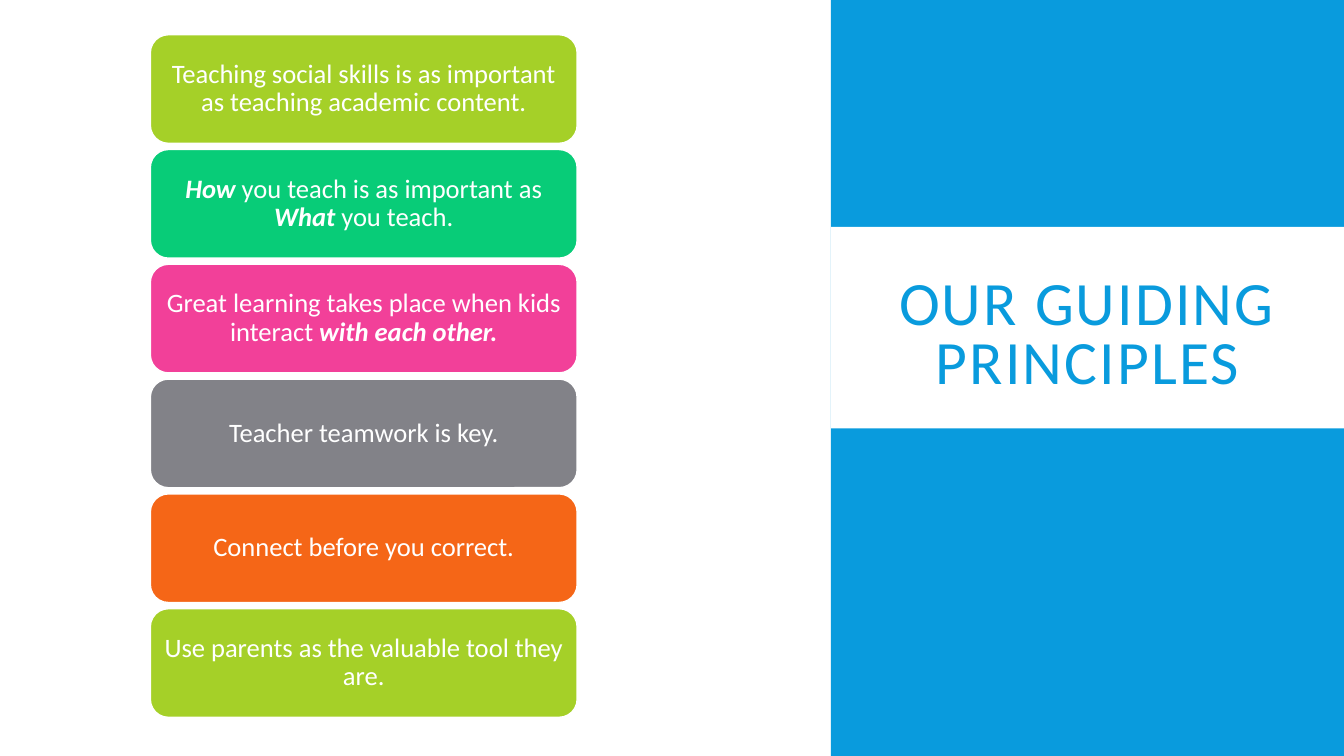
from pptx import Presentation
from pptx.dml.color import RGBColor
from pptx.enum import shapes, text
from pptx.util import Pt

BLUE = RGBColor(0x09, 0x9B, 0xDD)
WHITE = RGBColor(0xFF, 0xFF, 0xFF)
LIME = RGBColor(0xA5, 0xD0, 0x28)
GREEN = RGBColor(0x08, 0xCC, 0x78)
PINK = RGBColor(0xF2, 0x40, 0x99)
GRAY = RGBColor(0x82, 0x82, 0x88)
ORANGE = RGBColor(0xF5, 0x66, 0x17)
FONT = "Calibri"

HEADING = "OUR GUIDING PRINCIPLES"
PLAIN, STRONG = False, True
PRINCIPLES = [
    (LIME, [("Teaching social skills is as important as teaching academic content.", PLAIN)]),
    (GREEN, [("How", STRONG), (" you teach is as important as ", PLAIN),
             ("What", STRONG), (" you teach.", PLAIN)]),
    (PINK, [("Great learning takes place when kids interact ", PLAIN),
            ("with each other.", STRONG)]),
    (GRAY, [("Teacher teamwork is key.", PLAIN)]),
    (ORANGE, [("Connect before you correct.", PLAIN)]),
    (LIME, [("Use parents as the valuable tool they are.", PLAIN)]),
]

SLIDE_W, SLIDE_H = 960, 540
PANEL_LEFT = 593.6
BAND_TOP, BAND_H = 162, 144
CARD_LEFT, CARD_TOP, CARD_W, CARD_H = 107.4, 24.8, 304.9, 77.6
CARD_PITCH = 82


def add_block(slide, kind, left, top, width, height, color):
    block = slide.shapes.add_shape(kind, Pt(left), Pt(top), Pt(width), Pt(height))
    block.shadow.inherit = False
    block.fill.solid()
    block.fill.fore_color.rgb = color
    block.line.fill.background()
    return block


def style_paragraph(paragraph, size, color, spacing):
    paragraph.alignment = text.PP_ALIGN.CENTER
    paragraph.line_spacing = spacing
    paragraph.font.name = FONT
    paragraph.font.size = Pt(size)
    paragraph.font.color.rgb = color


def add_heading_panel(slide):
    rectangle = shapes.MSO_SHAPE.RECTANGLE
    panel_w = SLIDE_W - PANEL_LEFT
    add_block(slide, rectangle, PANEL_LEFT, 0, panel_w, SLIDE_H, BLUE)
    add_block(slide, rectangle, PANEL_LEFT, BAND_TOP, panel_w, BAND_H, WHITE)

    heading = slide.shapes.title
    heading.left, heading.top = Pt(619.2), Pt(172.8)
    heading.width, heading.height = Pt(315.4), Pt(136.8)
    frame = heading.text_frame
    frame.text = HEADING
    frame.word_wrap = True
    frame.auto_size = text.MSO_AUTO_SIZE.NONE
    frame.vertical_anchor = text.MSO_ANCHOR.MIDDLE
    style_paragraph(frame.paragraphs[0], 44, BLUE, 0.8)
    frame.paragraphs[0].runs[0].font._element.set("spc", "150")
    heading.element.getparent().append(heading.element)


def add_principle(slide, index, color, phrases):
    card = add_block(slide, shapes.MSO_SHAPE.ROUNDED_RECTANGLE, CARD_LEFT,
                     CARD_TOP + index * CARD_PITCH, CARD_W, CARD_H, color)
    card.line.color.rgb = WHITE
    card.line.width = Pt(1)
    frame = card.text_frame
    frame.word_wrap = True
    frame.vertical_anchor = text.MSO_ANCHOR.MIDDLE
    frame.margin_left = frame.margin_right = Pt(5.7)
    frame.margin_top = frame.margin_bottom = Pt(2.9)
    sentence = frame.paragraphs[0]
    style_paragraph(sentence, 19, WHITE, 0.9)
    for words, strong in phrases:
        phrase = sentence.add_run()
        phrase.text = words
        if strong:
            phrase.font.bold = phrase.font.italic = True


def main():
    deck = Presentation()
    deck.slide_width, deck.slide_height = Pt(SLIDE_W), Pt(SLIDE_H)
    slide = deck.slides.add_slide(deck.slide_layouts[5])
    add_heading_panel(slide)
    for index, (color, phrases) in enumerate(PRINCIPLES):
        add_principle(slide, index, color, phrases)
    deck.save("out.pptx")


if __name__ == "__main__":
    main()
